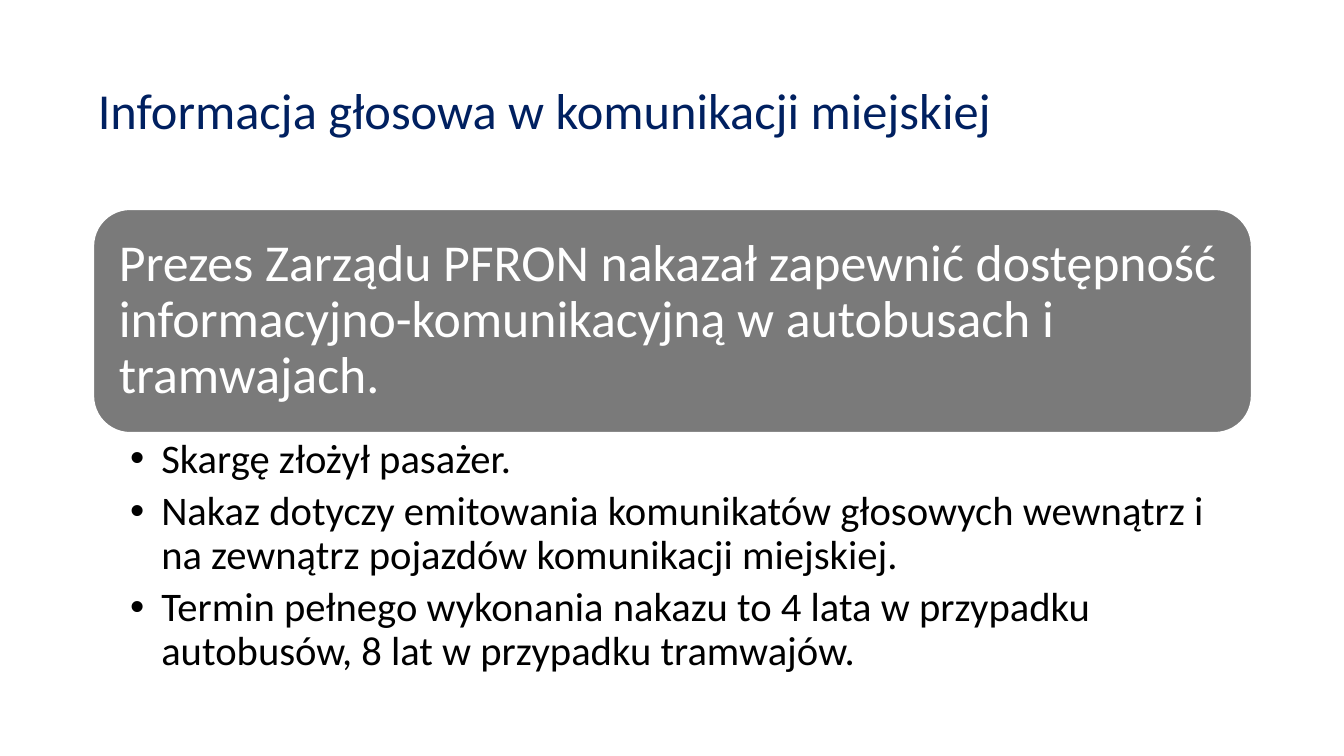
"""Build a slide on voice announcements in city transport."""
from dataclasses import dataclass
from lxml import etree
from pptx import Presentation
from pptx.dml.color import RGBColor
from pptx.enum.shapes import MSO_SHAPE
from pptx.enum.text import MSO_ANCHOR, PP_ALIGN
from pptx.oxml.ns import qn
from pptx.util import Inches, Pt

ROUND = MSO_SHAPE.ROUNDED_RECTANGLE
MIDDLE, TOP = MSO_ANCHOR.MIDDLE, MSO_ANCHOR.TOP
LEFT = PP_ALIGN.LEFT

TITLE = "Informacja głosowa w komunikacji miejskiej"
LEAD = ("Prezes Zarządu PFRON nakazał zapewnić dostępność "
        "informacyjno-komunikacyjną w autobusach i tramwajach.")
POINTS = [
    "Skargę złożył pasażer.",
    "Nakaz dotyczy emitowania komunikatów głosowych wewnątrz i "
    "na zewnątrz pojazdów komunikacji miejskiej.",
    "Termin pełnego wykonania nakazu to 4 lata w przypadku "
    "autobusów, 8 lat w przypadku tramwajów.",
]


@dataclass(frozen=True)
class Theme:
    """Colours, font and type sizes."""
    font: str = "Calibri"
    navy: str = "002060"
    gray: str = "7A7A7A"
    white: str = "FFFFFF"
    black: str = "000000"
    title: int = 36
    lead: int = 37
    point: int = 29


THEME = Theme()
WIDE, HIGH = 13.33, 7.5
SIDE = 0.92
SPAN = 11.5
HEAD = (0.4, 1.45)
CARD = (2.07, 2.23)
LIST = (CARD[0] + CARD[1], 2.51)
HANG = 0.31


def place(band):
    """Return the box of a full-width band."""
    top, tall = band
    return [Inches(n) for n in (SIDE, top, SPAN, tall)]


def write(shape, lines, size, color, pads, anchor, after=0):
    """Fill a shape with styled paragraphs."""
    frame = shape.text_frame
    frame.word_wrap = True
    frame.vertical_anchor = anchor
    left, top, right, low = [Inches(n) for n in pads]
    frame.margin_left, frame.margin_top = left, top
    frame.margin_right, frame.margin_bottom = right, low
    frame.text = "\n".join(lines)
    for para in frame.paragraphs:
        para.alignment = LEFT
        para.line_spacing = 0.9
        para.space_after = Pt(after)
        for run in para.runs:
            run.font.name = THEME.font
            run.font.size = Pt(size)
            run.font.color.rgb = RGBColor.from_string(color)


def bullet(para):
    """Give a paragraph a hanging round bullet."""
    props = para._p.get_or_add_pPr()
    props.set("marL", str(Inches(HANG)))
    props.set("indent", str(-Inches(HANG)))
    etree.SubElement(props, qn("a:buFont")).set("typeface", "Arial")
    etree.SubElement(props, qn("a:buChar")).set("char", "•")


def main():
    """Lay out the title, the card and the list."""
    deck = Presentation()
    deck.slide_width, deck.slide_height = Inches(WIDE), Inches(HIGH)
    shapes = deck.slides.add_slide(deck.slide_layouts[6]).shapes

    head = shapes.add_textbox(*place(HEAD))
    write(head, [TITLE], THEME.title, THEME.navy, [0.05] * 4, MIDDLE)

    card = shapes.add_shape(ROUND, *place(CARD))
    card.shadow.inherit = False
    card.fill.solid()
    card.fill.fore_color.rgb = RGBColor.from_string(THEME.gray)
    card.line.color.rgb = RGBColor.from_string(THEME.white)
    card.line.width = Pt(2)
    write(card, [LEAD], THEME.lead, THEME.white, [0.15] * 4, MIDDLE)

    body = shapes.add_textbox(*place(LIST))
    write(body, POINTS, THEME.point, THEME.black,
          (0.37, 0.05, 0.29, 0.05), TOP, after=6)
    for para in body.text_frame.paragraphs:
        bullet(para)

    deck.save("out.pptx")


if __name__ == "__main__":
    main()
